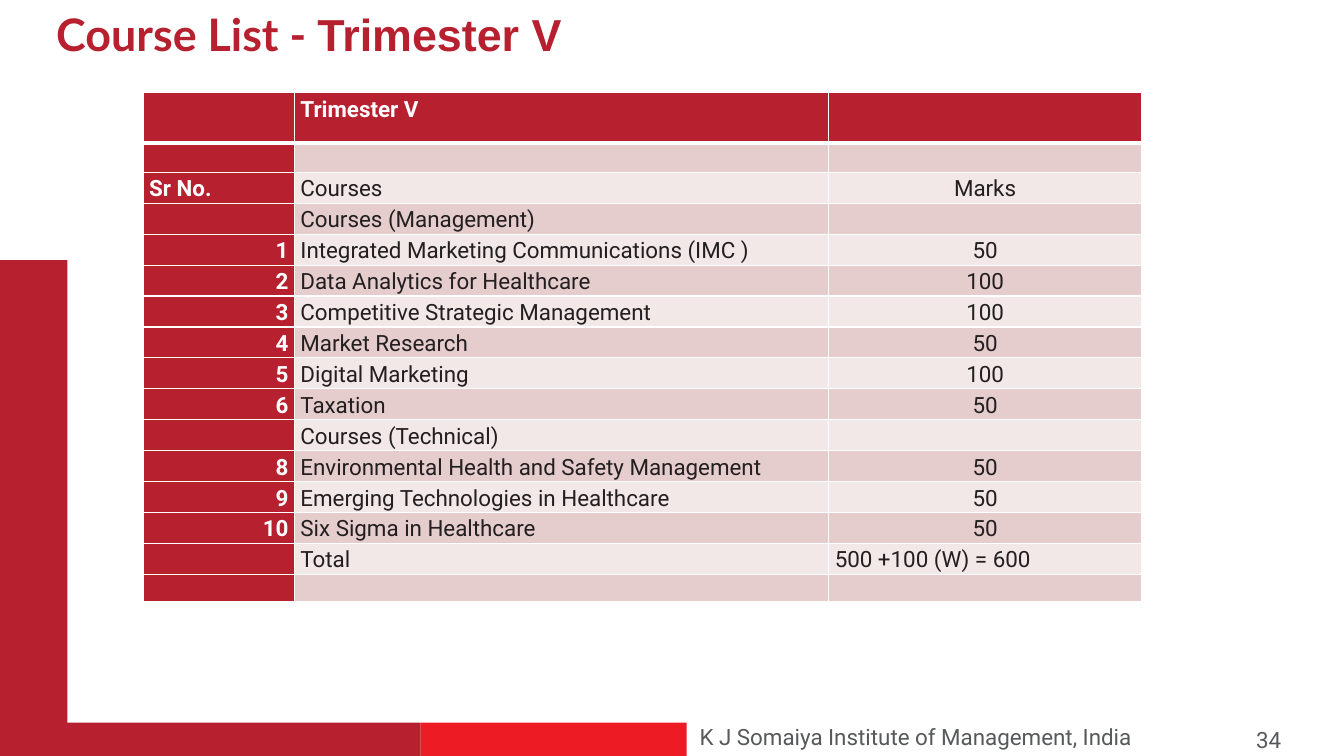
from lxml.etree import SubElement
from pptx import Presentation
from pptx.dml.color import RGBColor
from pptx.enum.shapes import MSO_SHAPE
from pptx.enum.text import PP_ALIGN
from pptx.oxml.ns import qn
from pptx.util import Inches, Pt

COLORS = {
    "crimson": "B7202E",
    "red": "ED1C24",
    "band_dark": "E6CDCD",
    "band_light": "F3E8E8",
    "ink": "231F20",
    "gray": "58595B",
    "white": "FFFFFF",
}

COURSE_ROWS = [
    ("", "Trimester V", ""),
    ("", "", ""),
    ("Sr No.", "Courses", "Marks"),
    ("", "Courses (Management)", ""),
    ("1", "Integrated Marketing Communications (IMC )", "50"),
    ("2", "Data Analytics for Healthcare", "100"),
    ("3", "Competitive Strategic Management", "100"),
    ("4", "Market Research", "50"),
    ("5", "Digital Marketing", "100"),
    ("6", "Taxation", "50"),
    ("", "Courses (Technical)", ""),
    ("8", "Environmental Health and Safety Management", "50"),
    ("9", "Emerging Technologies in Healthcare", "50"),
    ("10", "Six Sigma in Healthcare", "50"),
    ("", "Total", "500 +100 (W) = 600"),
    ("", "", ""),
]
COLUMN_WIDTHS = [1.5, 5.3, 3.1]
ROW_HEIGHTS = [0.5] + [0.29] * (len(COURSE_ROWS) - 2) + [0.27]


def color(name):
    return RGBColor.from_string(COLORS[name])


def add_run(paragraph, text, size, font_name, color_name, bold=False):
    run = paragraph.add_run()
    run.text = text
    run.font.size = Pt(size)
    run.font.name = font_name
    run.font.bold = bold
    run.font.color.rgb = color(color_name)


def add_text_box(slide, left, top, width, height):
    box = slide.shapes.add_textbox(Inches(left), Inches(top), Inches(width), Inches(height))
    box.text_frame.word_wrap = True
    return box.text_frame.paragraphs[0]


def add_bar(slide, left, top, width, height, color_name):
    bar = slide.shapes.add_shape(
        MSO_SHAPE.RECTANGLE, Inches(left), Inches(top), Inches(width), Inches(height))
    bar.shadow.inherit = False
    bar.fill.solid()
    bar.fill.fore_color.rgb = color(color_name)
    bar.line.fill.background()


def add_frame(slide, left, top, width, height):
    """Side bar and two-part bottom bar, with the footer text beside them."""
    bottom = top + height
    bar_top = bottom - 0.33
    add_bar(slide, left, top + 2.58, 0.67, height - 2.58, "crimson")
    add_bar(slide, left + 4.17, bar_top, 2.64, 0.33, "red")
    add_bar(slide, left, bar_top, 4.17, 0.33, "crimson")

    institute = add_text_box(slide, left + 6.84, bottom - 0.37, 5.09, 0.37)
    add_run(institute, "K J Somaiya Institute of Management, India", 16, "Roboto", "gray")
    number = add_text_box(slide, left + width - 0.97, bottom - 0.35, 0.87, 0.4)
    add_run(number, "34", 16, "Roboto", "gray")


def add_title(slide, left, top, width, height):
    title = add_text_box(slide, left, top, width, height)
    title.line_spacing = 0.9
    add_run(title, "Course List - ", 32, "Lato", "crimson", bold=True)
    add_run(title, "Trimester V", 32, "Arial", "crimson", bold=True)


def set_borders(cell, widths):
    """Draw white borders; widths maps each side to points."""
    properties = cell._tc.get_or_add_tcPr()
    for position, side in enumerate("LRTB"):
        line = properties.makeelement(qn(f"a:ln{side}"), {"w": str(Pt(widths[side]))})
        fill = SubElement(line, qn("a:solidFill"))
        SubElement(fill, qn("a:srgbClr"), val=COLORS["white"])
        properties.insert(position, line)


def cell_alignment(text, column):
    if column == 0 and text.isdigit():
        return PP_ALIGN.RIGHT
    if column == 2 and (text.isdigit() or text == "Marks"):
        return PP_ALIGN.CENTER
    return PP_ALIGN.LEFT


def fill_cell(cell, text, row, column):
    is_header = row == 0 or column == 0
    band = "band_dark" if row % 2 else "band_light"
    cell.fill.solid()
    cell.fill.fore_color.rgb = color("crimson" if is_header else band)
    cell.margin_left = cell.margin_right = Inches(0.06)
    cell.margin_top = cell.margin_bottom = 0
    set_borders(cell, {"L": 1, "R": 1, "T": 3 if row == 1 else 1, "B": 3 if row == 0 else 1})

    paragraph = cell.text_frame.paragraphs[0]
    if text:
        paragraph.alignment = cell_alignment(text, column)
        paragraph.line_spacing = 1.15
        add_run(paragraph, text, 16, "Roboto", "white" if is_header else "ink", is_header)
    else:
        # Keeps empty cells from stretching their row
        SubElement(paragraph._p, qn("a:endParaRPr"), sz="1000")


def add_course_table(slide, left, top):
    frame = slide.shapes.add_table(
        len(COURSE_ROWS), len(COLUMN_WIDTHS), Inches(left), Inches(top),
        Inches(sum(COLUMN_WIDTHS)), Inches(sum(ROW_HEIGHTS)))
    table = frame.table
    table.first_col = True
    for column, width in zip(table.columns, COLUMN_WIDTHS):
        column.width = Inches(width)
    for table_row, height in zip(table.rows, ROW_HEIGHTS):
        table_row.height = Inches(height)
    for row, texts in enumerate(COURSE_ROWS):
        for column, text in enumerate(texts):
            fill_cell(table.cell(row, column), text, row, column)


def main():
    presentation = Presentation()
    presentation.slide_width = Inches(13.33)
    presentation.slide_height = Inches(7.5)
    slide = presentation.slides.add_slide(presentation.slide_layouts[6])
    add_frame(slide, 0, 0, 13.33, 7.5)
    add_title(slide, 0.46, 0.08, 9.96, 1.2)
    add_course_table(slide, 1.42, 0.92)
    presentation.save("out.pptx")


if __name__ == "__main__":
    main()
